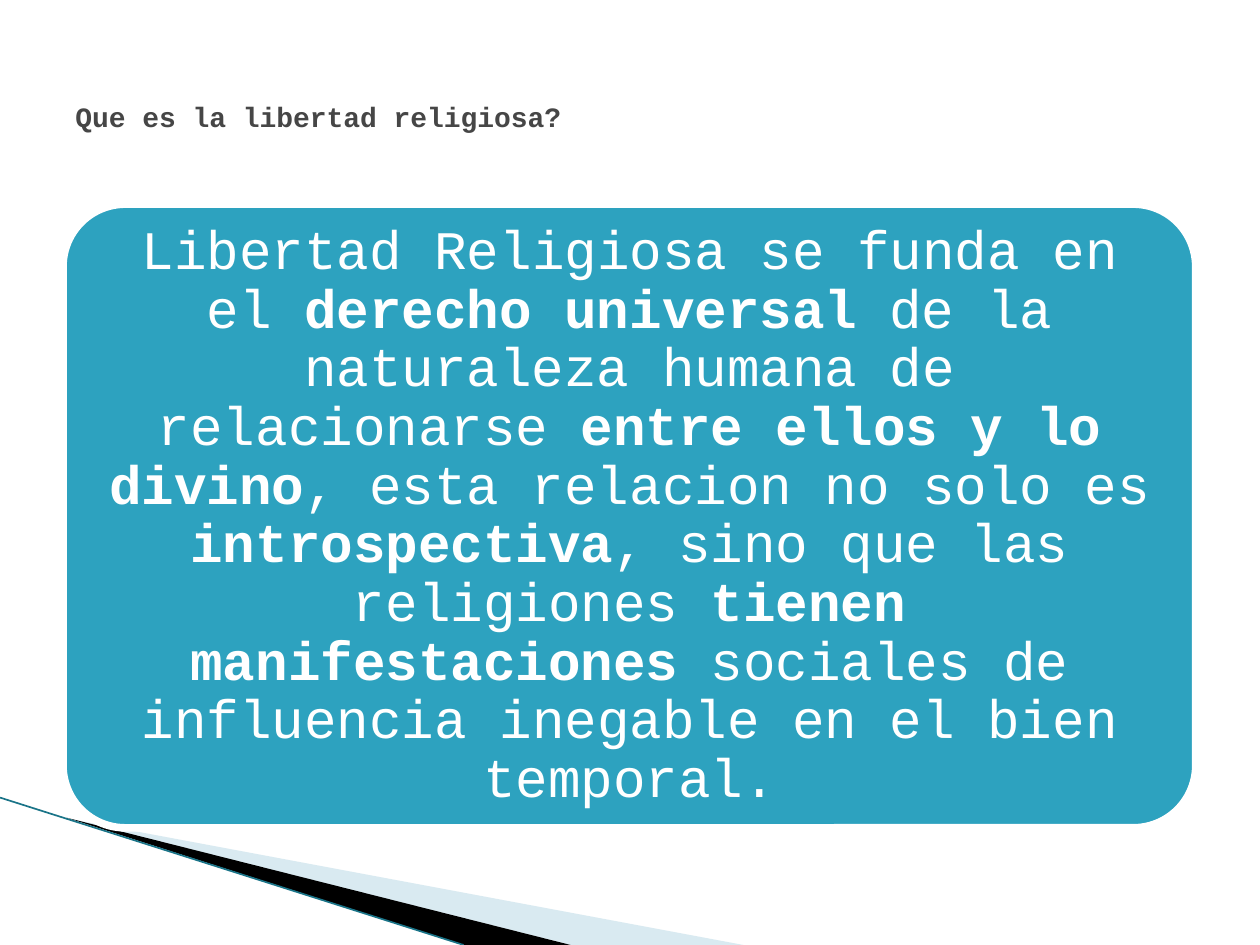
from lxml import etree
from pptx import Presentation
from pptx.dml.color import RGBColor
from pptx.enum.shapes import MSO_CONNECTOR as Connector, MSO_SHAPE as Shape
from pptx.enum.text import MSO_ANCHOR as Anchor, PP_ALIGN as Align
from pptx.oxml.ns import qn
from pptx.util import Inches, Pt


def color(value):
    return RGBColor.from_string(value)


class SlideBuilder:
    font_name = "Courier New"
    white = "FFFFFF"
    teal = "2DA2BF"
    dark_teal = "1A7488"
    pale_teal = "A0CBDC"
    black = "000000"
    gray = "464646"

    def __init__(self, presentation):
        self.slide = presentation.slides.add_slide(presentation.slide_layouts[6])

    def wedge(self, points, fill, alpha=None):
        corners = [(Inches(x), Inches(y)) for x, y in points]
        builder = self.slide.shapes.build_freeform(*corners[0], scale=1.0)
        builder.add_line_segments(corners[1:], close=True)
        shape = builder.convert_to_shape()
        shape.shadow.inherit = False
        shape.fill.solid()
        shape.fill.fore_color.rgb = color(fill)
        shape.line.fill.background()
        if alpha is not None:
            tint = shape.fill._xPr.find(qn("a:solidFill"))[0]
            etree.SubElement(tint, qn("a:alpha"), val=str(alpha * 1000))

    def line(self, start, end, line_color, width):
        connector = self.slide.shapes.add_connector(
            Connector.STRAIGHT, *map(Inches, start + end))
        connector.line.color.rgb = color(line_color)
        connector.line.width = Pt(width)
        etree.SubElement(connector._element.spPr, qn("a:effectLst"))

    def style(self, paragraph, size, text_color):
        paragraph.font.name = self.font_name
        paragraph.font.size = Pt(size)
        paragraph.font.color.rgb = color(text_color)

    def title(self, text, box):
        shape = self.slide.shapes.add_textbox(*map(Inches, box))
        frame = shape.text_frame
        frame.word_wrap = True
        frame.vertical_anchor = Anchor.MIDDLE
        paragraph = frame.paragraphs[0]
        paragraph.text = text
        self.style(paragraph, 16, self.gray)
        paragraph.font.bold = True

    def card(self, pieces, box):
        shape = self.slide.shapes.add_shape(Shape.ROUNDED_RECTANGLE, *map(Inches, box))
        shape.adjustments[0] = 0.1
        shape.shadow.inherit = False
        shape.fill.solid()
        shape.fill.fore_color.rgb = color(self.teal)
        shape.line.color.rgb = color(self.white)
        shape.line.width = Pt(4.33)
        frame = shape.text_frame
        frame.word_wrap = True
        frame.vertical_anchor = Anchor.MIDDLE
        frame.margin_left = frame.margin_right = Inches(0.13)
        frame.margin_top = frame.margin_bottom = Inches(0.13)
        paragraph = frame.paragraphs[0]
        paragraph.alignment = Align.CENTER
        paragraph.line_spacing = 0.9
        self.style(paragraph, 31, self.white)
        for text, bold in pieces:
            run = paragraph.add_run()
            run.text = text
            run.font.bold = bold


def main():
    presentation = Presentation()
    presentation.slide_width = Inches(10)
    presentation.slide_height = Inches(7.5)
    builder = SlideBuilder(presentation)

    builder.wedge([(0.55, 6.5), (5.9, 7.5), (4.53, 7.5)], builder.pale_teal, 40)
    builder.wedge([(0.53, 6.49), (4.53, 7.5), (3.68, 7.5)], builder.black)
    builder.line((0, 6.33), (3.68, 7.5), builder.dark_teal, 0.95)
    builder.card([
        ("Libertad Religiosa se funda en el ", False),
        ("derecho universal", True),
        (" de la naturaleza humana de relacionarse ", False),
        ("entre ellos y lo divino", True),
        (", esta relacion no solo es ", False),
        ("introspectiva", True),
        (", sino que las religiones ", False),
        ("tienen manifestaciones ", True),
        ("sociales de influencia inegable en el bien temporal.", False),
    ], (0.5, 1.62, 8.99, 4.95))
    builder.title("Que es la libertad religiosa?", (0.5, 0.3, 9, 1.25))

    presentation.save("out.pptx")


if __name__ == "__main__":
    main()
